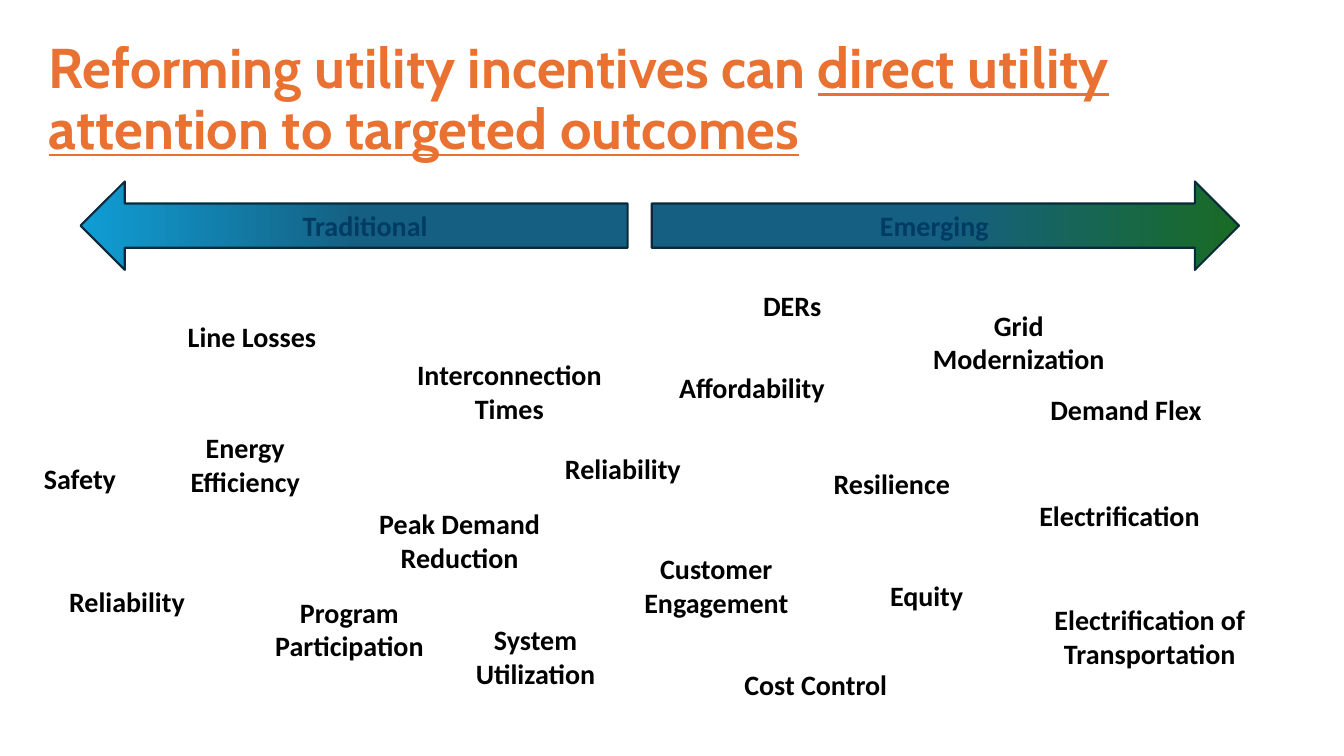
from copy import deepcopy
from pptx import Presentation
from pptx.dml.color import RGBColor
from pptx.enum.shapes import MSO_SHAPE
from pptx.enum.text import MSO_ANCHOR, MSO_AUTO_SIZE, PP_ALIGN
from pptx.util import Inches, Pt

THEME = {
    "title": {"name": "Cabin", "size": Pt(40), "bold": True, "color": "E97132"},
    "heading": {"name": "Calibri", "size": Pt(20), "bold": True, "color": "003B64"},
    "outcome": {"name": "Calibri", "size": Pt(20), "bold": True, "color": "000000"},
    "arrow_body": "156082",
    "arrow_outline": "092A39",
    "traditional_tip": "0F9ED5",
    "emerging_tip": "196B24",
}

deck = Presentation()
deck.slide_width, deck.slide_height = Inches(13.33), Inches(7.5)
slide = deck.slides.add_slide(deck.slide_layouts[6])


def place(left, top, width, height):
    column, row = deck.slide_width / 100, deck.slide_height / 100
    return [int(n) for n in (left * column, top * row, width * column, height * row)]


def write(paragraph, text, style, underline=False):
    run = paragraph.add_run()
    run.text = text
    for attribute, value in THEME[style].items():
        if attribute == "color":
            run.font.color.rgb = RGBColor.from_string(value)
        else:
            setattr(run.font, attribute, value)
    if underline:
        run.font.underline = True


title = slide.shapes.add_textbox(*place(2.9, 3.7, 89.6, 19.3)).text_frame
title.word_wrap = True
title.vertical_anchor = MSO_ANCHOR.MIDDLE
title.paragraphs[0].line_spacing = 0.9
write(title.paragraphs[0], "Reforming utility incentives can ", "title")
write(title.paragraphs[0], "direct utility attention to targeted outcomes", "title", True)

ARROWS = [
    ("Traditional", 6, 40.7, "traditional_tip", False),
    ("Emerging", 48.5, 43.7, "emerging_tip", True),
]
for heading, left, width, tip, points_right in ARROWS:
    arrow = slide.shapes.add_shape(MSO_SHAPE.LEFT_ARROW, *place(left, 24, width, 11.7))
    arrow.shadow.inherit = False
    if points_right:
        arrow._element.spPr.xfrm.set("flipH", "1")
    arrow.fill.gradient()
    arrow.fill.gradient_angle = 180
    first_stop = arrow._element.spPr.xpath("a:gradFill/a:gsLst/a:gs")[0]
    first_stop.addnext(deepcopy(first_stop))
    stop_colors = (THEME["arrow_body"], THEME["arrow_body"], THEME[tip])
    for number, (stop, color) in enumerate(zip(arrow.fill.gradient_stops, stop_colors)):
        stop.position = number / 2
        stop.color.rgb = RGBColor.from_string(color)
    arrow.line.color.rgb = RGBColor.from_string(THEME["arrow_outline"])
    arrow.line.width = Pt(1.5)
    arrow.text_frame.vertical_anchor = MSO_ANCHOR.MIDDLE
    arrow.text_frame.paragraphs[0].alignment = PP_ALIGN.CENTER
    write(arrow.text_frame.paragraphs[0], heading, "heading")

ONE_LINE, TWO_LINES = 5.87, 10.27
OUTCOMES = [
    ("Line Losses", 13.1, 41.6, 11.3, ONE_LINE),
    ("Customer Engagement", 46.4, 72.3, 13.8, TWO_LINES),
    ("Energy Efficiency", 12.6, 56.3, 11.3, TWO_LINES),
    ("Reliability", 3.8, 76.7, 11.3, ONE_LINE),
    ("Resilience", 60.7, 61.1, 11.3, ONE_LINE),
    ("Interconnection Times", 30.2, 46.7, 15.4, TWO_LINES),
    ("System Utilization", 34.2, 81.7, 11.3, TWO_LINES),
    ("Safety", 0.3, 60.4, 11.3, ONE_LINE),
    ("Program Participation", 19.1, 78.1, 13.8, TWO_LINES),
    ("Cost Control", 53, 87.7, 15.4, ONE_LINE),
    ("Demand Flex", 77.3, 51.3, 12.95, TWO_LINES),
    ("Equity", 62.5, 75.9, 12.9, ONE_LINE),
    ("Electrification", 76.4, 65.3, 13.8, ONE_LINE),
    ("Affordability", 49, 48.3, 13.9, ONE_LINE),
    ("Electrification of Transportation", 77, 79.1, 17.1, TWO_LINES),
    ("Grid Modernization", 67.7, 40.1, 16.2, TWO_LINES),
    ("Reliability", 39.9, 59.1, 12.9, ONE_LINE),
    ("DERs", 53.3, 37.5, 11.3, ONE_LINE),
    ("Peak Demand Reduction", 26.5, 66.4, 15.4, TWO_LINES),
]
for outcome, *area in OUTCOMES:
    label = slide.shapes.add_textbox(*place(*area)).text_frame
    label.word_wrap = True
    label.auto_size = MSO_AUTO_SIZE.SHAPE_TO_FIT_TEXT
    label.paragraphs[0].alignment = PP_ALIGN.CENTER
    write(label.paragraphs[0], outcome, "outcome")

deck.save("out.pptx")
